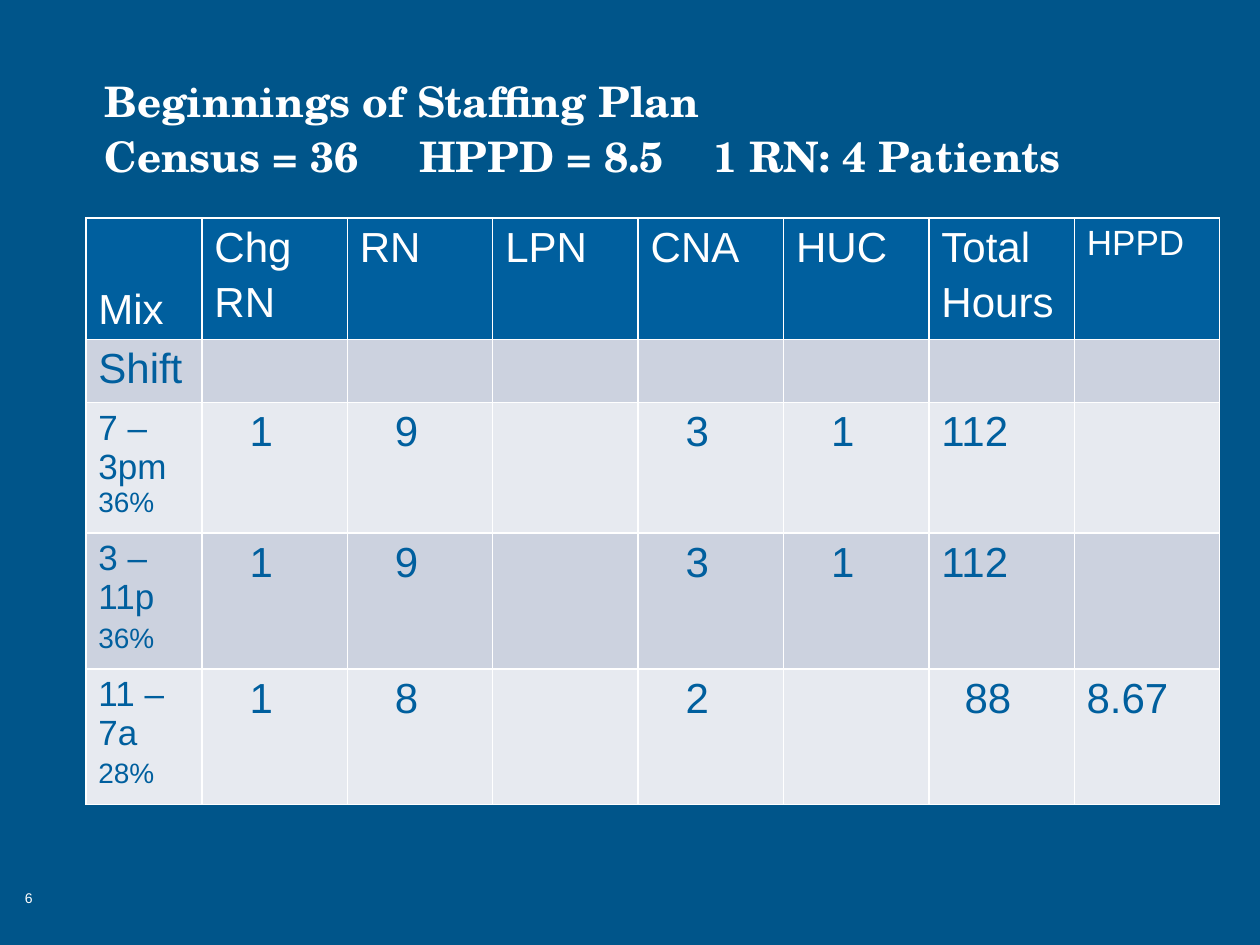
import pptx
import pptx.util
import pptx.dml.color
import pptx.enum.text
from lxml import etree

Cm = pptx.util.Cm
Pt = pptx.util.Pt
Anchor = pptx.enum.text.MSO_ANCHOR
Align = pptx.enum.text.PP_ALIGN

COLORS = {"back": "00558A", "head": "005F9E", "odd": "CCD2DF",
          "even": "E7EAF0", "ink": "005F9E", "white": "FFFFFF"}
SANS = "Arial"
SERIF = "TeX Gyre Schola"
HEADS = ["Mix", "Chg\nRN", "RN", "LPN", "CNA", "HUC", "Total\nHours", "HPPD"]
SHIFTS = [
    ["Shift", "", "", "", "", "", "", ""],
    ["7 – 3pm", "1", "9", "", "3", "1", "112", ""],
    ["3 – 11p", "1", "9", "", "3", "1", "112", ""],
    ["11 – 7a", "1", "8", "", "2", "", "88", "8.67"],
]
SHARES = ["", " 36%", "36%", "28%"]
HEIGHTS = [2.29, 1.21, 2.45, 2.57, 2.57]
INDENTS = {1: 0.71, 2: 0.47}


def color(name):
    return pptx.dml.color.RGBColor.from_string(COLORS[name])


def style(font, size, name, face=SANS, bold=False):
    font.size = Pt(size)
    font.name = face
    font.bold = bold
    font.color.rgb = color(name)


def add_tabs(par, stops):
    props = par._p.get_or_add_pPr()
    space = pptx.oxml.ns.qn
    tabs = etree.SubElement(props, space("a:tabLst"))
    for stop in stops:
        etree.SubElement(tabs, space("a:tab"), pos=str(Cm(stop)), algn="l")


def place(shape, left, top, width, height):
    shape.left, shape.top = Cm(left), Cm(top)
    shape.width, shape.height = Cm(width), Cm(height)


def draw_title(slide, left, top, width, height):
    title = slide.shapes.title
    place(title, left, top, width, height)
    frame = title.text_frame
    frame.auto_size = pptx.enum.text.MSO_AUTO_SIZE.NONE
    frame.vertical_anchor = Anchor.BOTTOM
    par = frame.paragraphs[0]
    par.text = ("Beginnings of Staffing Plan\v"
                "Census = 36\tHPPD = 8.5\t1 RN: 4 Patients")
    par.alignment = Align.LEFT
    par.line_spacing = 1.1
    add_tabs(par, [6.35, 12.28])
    for run in par.runs:
        style(run.font, 24, "white", SERIF, True)


def fill_cell(cell, text, size, ink, back):
    cell.fill.solid()
    cell.fill.fore_color.rgb = color(back)
    cell.text_frame.text = text
    for i, par in enumerate(cell.text_frame.paragraphs):
        if i:
            par.space_before = Pt(size * 0.2)
        for run in par.runs:
            style(run.font, size, ink)


def add_share(cell, text):
    frame = cell.text_frame
    if text.startswith(" "):
        par = frame.paragraphs[0]
    else:
        par = frame.add_paragraph()
        par.space_before = Pt(3.2)
    run = par.add_run()
    run.text = text
    style(run.font, 16, "ink")


def draw_table(slide, left, top, width, height):
    grid = slide.shapes.add_table(
        len(HEIGHTS), len(HEADS), Cm(left), Cm(top), Cm(width), Cm(height)).table
    first = 2.34
    for i, col in enumerate(grid.columns):
        col.width = Cm((width - first) / (len(HEADS) - 1) if i else first)
    for row, tall in zip(grid.rows, HEIGHTS):
        row.height = Cm(tall)

    for c, text in enumerate(HEADS):
        size = 20 if text == "HPPD" else 24
        fill_cell(grid.cell(0, c), text, size, "white", "head")
    grid.cell(0, 0).vertical_anchor = Anchor.BOTTOM

    for r, (row, share) in enumerate(zip(SHIFTS, SHARES), 1):
        for c, text in enumerate(row):
            cell = grid.cell(r, c)
            size = 20 if share and c == 0 else 24
            fill_cell(cell, text, size, "ink", "odd" if r % 2 else "even")
            if c and text:
                cell.margin_left = Cm(0.25 + INDENTS.get(len(text), 0))
        if share:
            add_share(grid.cell(r, 0), share)


def draw_number(slide, left, top, width, height):
    box = slide.shapes.add_textbox(Cm(left), Cm(top), Cm(width), Cm(height))
    frame = box.text_frame
    frame.word_wrap = True
    frame.vertical_anchor = Anchor.MIDDLE
    frame.text = "6"
    style(frame.paragraphs[0].runs[0].font, 8, "white")


def main():
    deck = pptx.Presentation()
    deck.slide_width, deck.slide_height = Cm(25.4), Cm(19.05)
    slide = deck.slides.add_slide(deck.slide_layouts[5])
    slide.background.fill.solid()
    slide.background.fill.fore_color.rgb = color("back")
    draw_number(slide, 0.25, 17.15, 1.22, 1.9)
    draw_title(slide, 1.85, 1.04, 22.73, 2.74)
    draw_table(slide, 1.73, 4.39, 22.86, sum(HEIGHTS))
    deck.save("out.pptx")


if __name__ == "__main__":
    main()
